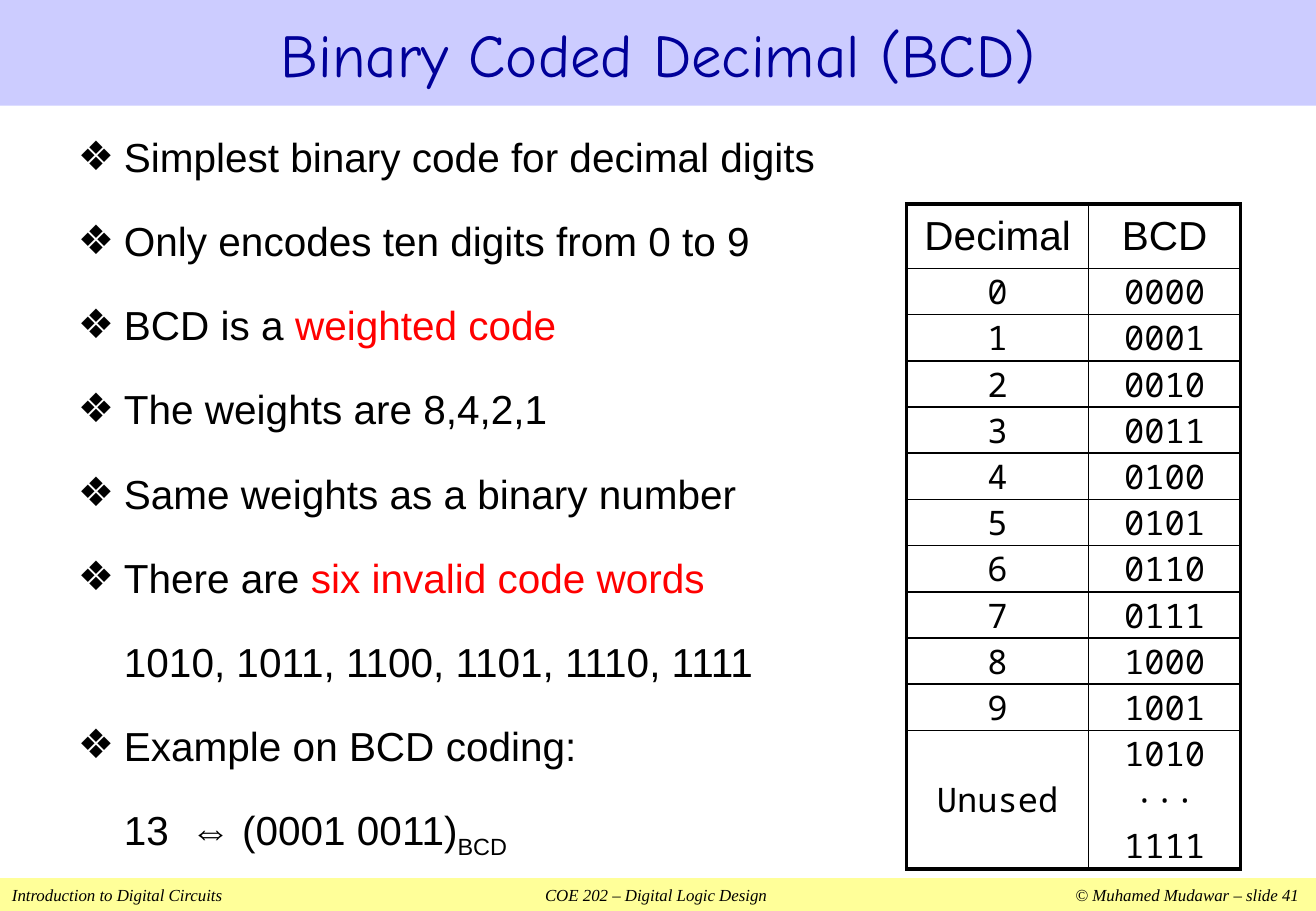
from lxml.etree import SubElement
from pptx import Presentation
from pptx.dml.color import RGBColor
from pptx.enum.shapes import MSO_SHAPE
from pptx.enum.text import MSO_ANCHOR, MSO_AUTO_SIZE, PP_ALIGN
from pptx.oxml.ns import qn
from pptx.util import Inches, Pt

BLACK, RED, NAVY = "000000", "FF0000", "000099"
BULLETS = [
    (True, [("Simplest binary code for decimal digits", {})]),
    (True, [("Only encodes ten digits from 0 to 9", {})]),
    (True, [("BCD is a ", {}), ("weighted code", {"color": RED})]),
    (True, [("The weights are 8,4,2,1", {})]),
    (True, [("Same weights as a binary number", {})]),
    (True, [("There are ", {}), ("six invalid code words", {"color": RED})]),
    (False, [("1010, 1011, 1100, 1101, 1110, 1111", {})]),
    (True, [("Example on BCD coding:", {})]),
    (False, [("13", {}), (" ", {"spacing": 6}), ("⇔ (0001 0011)", {}),
             ("BCD", {"baseline": -25})]),
]


def rgb(value):
    return RGBColor.from_string(value)


def add_text(p, text, size=24, font="Arial", color=BLACK, italic=False,
             baseline=None, spacing=None):
    r = p.add_run()
    r.text = text
    r.font.size = Pt(size)
    r.font.name = font
    r.font.italic = italic
    r.font.color.rgb = rgb(color)
    rPr = r.font._element
    if baseline:
        rPr.set("baseline", str(baseline * 1000))
    if spacing:
        rPr.set("spc", str(spacing * 100))


def place(sp, box):
    sp.left, sp.top, sp.width, sp.height = [Inches(v) for v in box]


def add_title(s, box):
    sp = s.shapes.title
    place(sp, box)
    sp.fill.solid()
    sp.fill.fore_color.rgb = rgb("CCCCFF")
    tf = sp.text_frame
    tf.auto_size = MSO_AUTO_SIZE.NONE
    tf.vertical_anchor = MSO_ANCHOR.MIDDLE
    p = tf.paragraphs[0]
    p.alignment = PP_ALIGN.CENTER
    add_text(p, "Binary Coded Decimal (BCD)", size=36, font="Comic Neue", color=NAVY)


def add_body(s, box):
    sp = s.placeholders[1]
    place(sp, box)
    tf = sp.text_frame
    tf.auto_size = MSO_AUTO_SIZE.NONE
    tf.vertical_anchor = MSO_ANCHOR.TOP
    for i, (bulleted, runs) in enumerate(BULLETS):
        p = tf.add_paragraph() if i else tf.paragraphs[0]
        p.space_before = Pt(21)
        pPr = p._p.get_or_add_pPr()
        pPr.set("marL", str(Inches(0.38)))
        pPr.set("indent", str(Inches(-0.38) if bulleted else 0))
        if bulleted:
            SubElement(pPr, qn("a:buFont"), typeface="Arial")
            SubElement(pPr, qn("a:buChar"), char="❖")
        else:
            SubElement(pPr, qn("a:buNone"))
        for text, style in runs:
            add_text(p, text, **style)


def set_borders(cell, widths):
    tcPr = cell._tc.get_or_add_tcPr()
    for side, width in zip("LRTB", widths):
        ln = SubElement(tcPr, qn(f"a:ln{side}"), w=str(Pt(width)))
        fill = SubElement(ln, qn("a:solidFill"))
        SubElement(fill, qn("a:srgbClr"), val=BLACK)


def add_code_table(s, box):
    rows = [("Decimal", "BCD")]
    rows += [(str(n), f"{n:04b}") for n in range(10)]
    rows += [("Unused", "1010\n···\n1111")]
    heights = [0.53] + [0.38] * 10 + [1.14]
    table = s.shapes.add_table(len(rows), 2, *[Inches(v) for v in box]).table
    table.first_row = table.horz_banding = False
    for column, width in zip(table.columns, (1.5, 1.25)):
        column.width = Inches(width)
    last = len(rows) - 1
    for i, row in enumerate(rows):
        table.rows[i].height = Inches(heights[i])
        style = {"size": 20, "font": "Noto Sans Mono"} if i else {}
        for j, text in enumerate(row):
            cell = table.cell(i, j)
            cell.margin_left = cell.margin_right = 0
            cell.margin_top = cell.margin_bottom = 0
            cell.vertical_anchor = MSO_ANCHOR.MIDDLE
            outer = (j == 0, j == 1, i == 0, i == last)
            set_borders(cell, [2.25 if edge else 1 for edge in outer])
            cell.fill.background()
            tf = cell.text_frame
            for k, line in enumerate(text.split("\n")):
                p = tf.add_paragraph() if k else tf.paragraphs[0]
                p.alignment = PP_ALIGN.CENTER
                add_text(p, line, **style)


def add_footer(s, box):
    sp = s.shapes.add_shape(MSO_SHAPE.RECTANGLE, *[Inches(v) for v in box])
    sp.shadow.inherit = False
    sp.fill.solid()
    sp.fill.fore_color.rgb = rgb("FFFF99")
    sp.line.fill.background()
    tf = sp.text_frame
    tf.word_wrap = True
    tf.vertical_anchor = MSO_ANCHOR.MIDDLE
    p = tf.paragraphs[0]
    p.alignment = PP_ALIGN.LEFT
    tabs = SubElement(p._p.get_or_add_pPr(), qn("a:tabLst"))
    for pos, align in ((5.3, "ctr"), (10.59, "r")):
        SubElement(tabs, qn("a:tab"), pos=str(Inches(pos)), algn=align)
    add_text(p, "Introduction to Digital Circuits\tCOE 202 – Digital Logic Design"
             "\t© Muhamed Mudawar – slide 41",
             size=10, font="Times New Roman", italic=True)


def main():
    prs = Presentation()
    prs.slide_width, prs.slide_height = Inches(10.83), Inches(7.5)
    s = prs.slides.add_slide(prs.slide_layouts[1])
    add_footer(s, (0, 7.23, 10.83, 0.27))
    add_title(s, (0, 0, 10.83, 0.87))
    add_body(s, (0.54, 1.04, 6.85, 6.05))
    add_code_table(s, (7.46, 1.68, 2.75, 5.47))
    prs.save("out.pptx")


if __name__ == "__main__":
    main()
